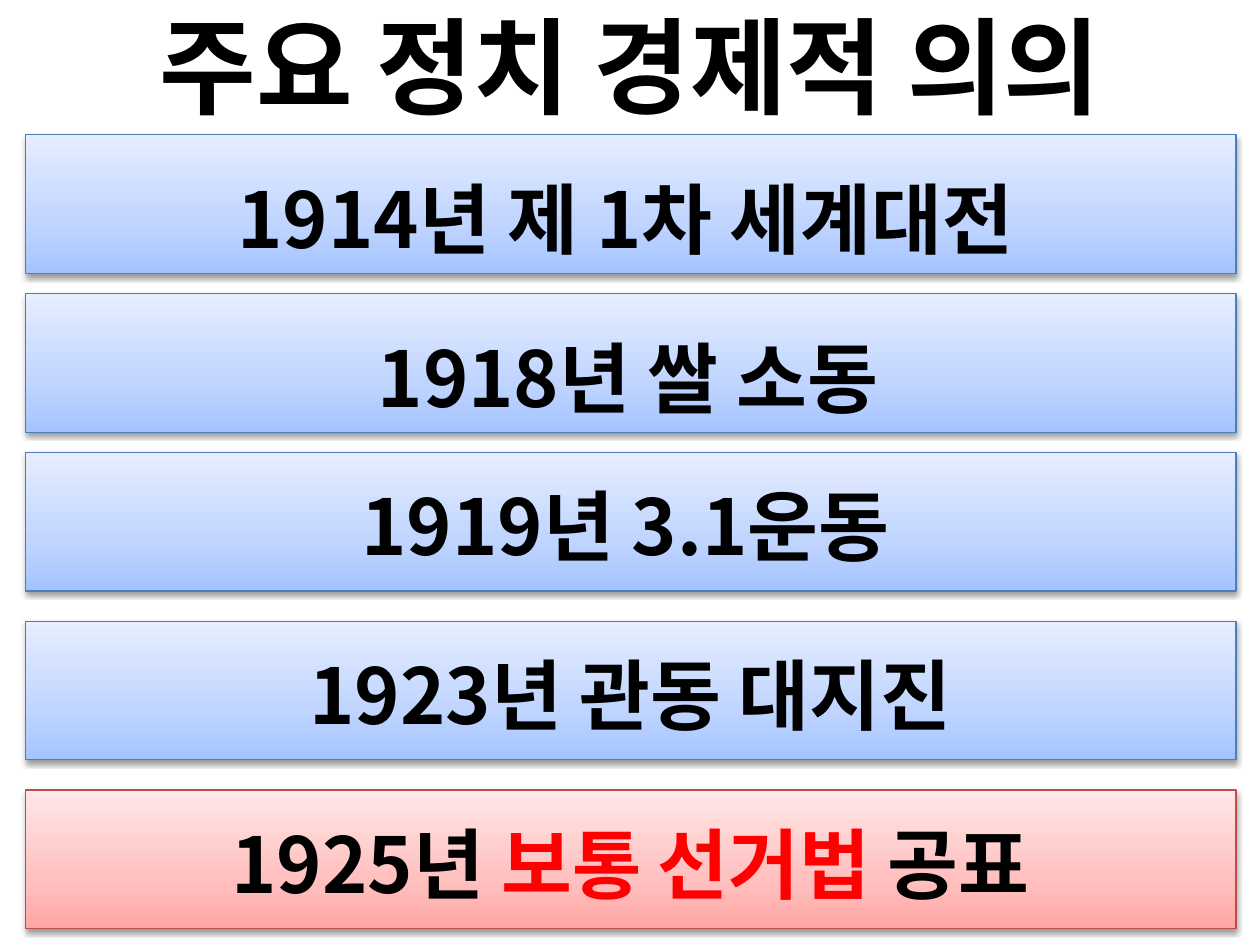
from lxml.etree import SubElement
from pptx import Presentation
from pptx.dml.color import RGBColor
from pptx.enum.shapes import MSO_SHAPE
from pptx.enum.text import MSO_ANCHOR, MSO_AUTO_SIZE, PP_ALIGN
from pptx.oxml.ns import qn
from pptx.util import Pt

FONT = "Noto Sans CJK KR"
BLACK, RED = "000000", "FF0000"
BLUE_BAR = ("4B7EBC", [(0, "A4C4FF"), (35, "BFD4FF"), (100, "E6EEFF")])
RED_BAR = ("BF4C48", [(0, "FFA6A5"), (35, "FFC0BF"), (100, "FFE7E7")])
BAR_LEFT, BAR_WIDTH, BAR_HEIGHT = 14.4, 692, 79.2
LABEL_HEIGHT = 60.5


def color(value):
    return RGBColor.from_string(value)


class SlideBuilder:
    def __init__(self, slide):
        self.slide = slide

    def text(self, shapes, left, top, width, height, spans, anchor=MSO_ANCHOR.TOP):
        """Add one centred bold line; spans are (text, size, colour)."""
        box = shapes.add_textbox(Pt(left), Pt(top), Pt(width), Pt(height))
        frame = box.text_frame
        frame.word_wrap = True
        frame.vertical_anchor = anchor
        para = frame.paragraphs[0]
        para.alignment = PP_ALIGN.CENTER
        for text, size, hue in spans:
            span = para.add_run()
            span.text = text
            span.font.name = FONT
            span.font.size = Pt(size)
            span.font.bold = True
            span.font.color.rgb = color(hue)
            SubElement(span.font._element, qn("a:ea"), typeface=FONT)
        return box

    def bar(self, shapes, top, style):
        line_color, stops = style
        bar = shapes.add_shape(MSO_SHAPE.RECTANGLE, Pt(BAR_LEFT), Pt(top),
                               Pt(BAR_WIDTH), Pt(BAR_HEIGHT))
        bar.line.color.rgb = color(line_color)
        bar.line.width = Pt(0.75)

        # Gradient from bottom to top
        bar.fill.gradient()
        bar.fill.gradient_angle = 90
        properties = bar._element.spPr
        stop_list = properties.find(qn("a:gradFill")).find(qn("a:gsLst"))
        for old_stop in list(stop_list):
            stop_list.remove(old_stop)
        for position, hue in stops:
            stop = SubElement(stop_list, qn("a:gs"), pos=str(position * 1000))
            SubElement(stop, qn("a:srgbClr"), val=hue)

        # Soft shadow straight below
        bar.shadow.inherit = False
        shadow = SubElement(properties.find(qn("a:effectLst")), qn("a:outerShdw"),
                            blurRad=str(Pt(3.1)), dist=str(Pt(1.6)),
                            dir="5400000", rotWithShape="0")
        shade = SubElement(shadow, qn("a:srgbClr"), val=BLACK)
        SubElement(shade, qn("a:alpha"), val="38000")

    def event(self, top, style, left, width, offset, spans):
        """Add a bar grouped with its label."""
        group = self.slide.shapes.add_group_shape()
        self.bar(group.shapes, top, style)
        label = self.text(group.shapes, left, top + offset, width, LABEL_HEIGHT, spans)
        label.text_frame.auto_size = MSO_AUTO_SIZE.SHAPE_TO_FIT_TEXT


def main():
    deck = Presentation()
    deck.slide_width, deck.slide_height = Pt(720), Pt(540)
    builder = SlideBuilder(deck.slides.add_slide(deck.slide_layouts[6]))

    # Title
    builder.text(builder.slide.shapes, 0, -7.9, 720, 90,
                 [("주요 정치 경제적 의의", 60, BLACK)], MSO_ANCHOR.MIDDLE)

    # Events: bar top, label left, label width, label offset, text
    events = [
        (77, 14.4, 686, 17.3, "1914년 제 1차 세계대전"),
        (167.8, 17.3, 683, 17.3, "1918년 쌀 소동"),
        (258.5, 14.4, 686, 11.5, "1919년 3.1운동"),
        (355, 14.4, 692, 11.5, "1923년 관동 대지진"),
    ]
    for top, left, width, offset, text in events:
        builder.event(top, BLUE_BAR, left, width, offset, [(text, 44, BLACK)])

    # Highlighted event
    builder.event(451.5, RED_BAR, 20.2, 680, 11.5, [
        ("1925년 ", 44, BLACK), ("보", 44, RED), ("통", 43, RED),
        (" ", 40, RED), ("선거법 ", 44, RED), ("공표", 44, BLACK)])

    deck.save("out.pptx")


if __name__ == "__main__":
    main()
